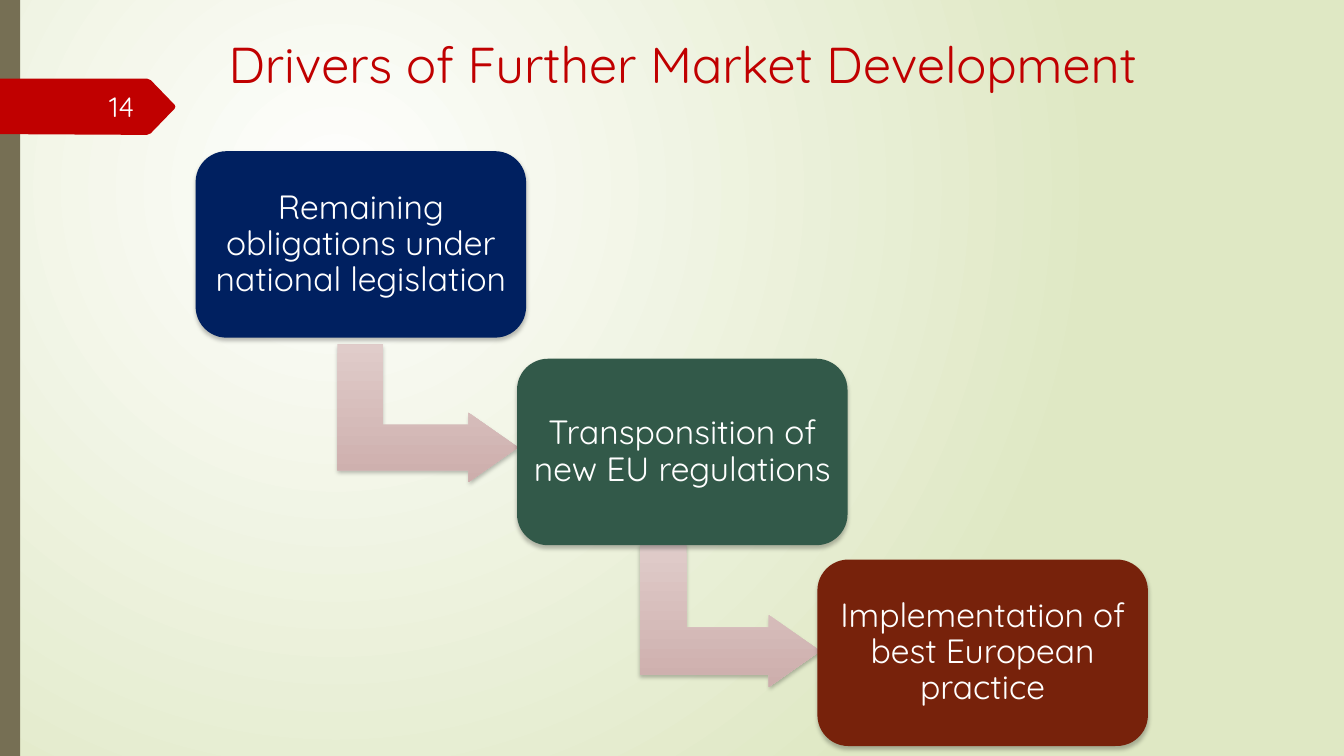
import dataclasses
import typing

import lxml.etree
import pptx
import pptx.dml.color
import pptx.enum.shapes
import pptx.enum.text
import pptx.oxml
import pptx.oxml.ns
import pptx.util

Cm = pptx.util.Cm
Pt = pptx.util.Pt
SHAPES = pptx.enum.shapes.MSO_SHAPE
ALIGN = pptx.enum.text.PP_ALIGN
ANCHOR = pptx.enum.text.MSO_ANCHOR
qn = pptx.oxml.ns.qn

FONT = "Quicksand"
COLORS = {
    "background_center": "FEFEFD",
    "background_edge": "DFE8C4",
    "side_bar": "766F54",
    "red": "C00000",
    "number": "FEFFFF",
    "white": "FFFFFF",
    "arrow_top": "E0CCCA",
    "arrow_bottom": "CDAEAC",
    "navy": "002060",
    "green": "325949",
    "brown": "77220B",
}
DRIVER_WIDTH, DRIVER_HEIGHT = Cm(8.33), Cm(4.7)
ARROW_HEIGHT = Cm(4.55)
ARROW_ADJUSTMENTS = (0.328, 0.25, 0.358)
TAG_OUTLINE = ((0, 1.98), (3.7, 1.98), (3.8, 2.02), (4.4, 2.64),
               (4.42, 2.69), (4.4, 2.74), (3.8, 3.36), (3.7, 3.4), (0, 3.38))


@dataclasses.dataclass
class Arrow:
    left: float
    top: float
    width: float


@dataclasses.dataclass
class Driver:
    text: str
    left: float
    top: float
    color: str
    arrow: typing.Optional[Arrow] = None


DRIVERS = (
    Driver("Remaining obligations under national legislation",
           4.93, 3.81, "navy", Arrow(9.04, 8.13, 3.48)),
    Driver("Transponsition of new EU regulations",
           13.03, 9.04, "green", Arrow(16.59, 13.23, 3.61)),
    Driver("Implementation of best European practice", 20.6, 14.1, "brown"),
)


def rgb(name: str) -> pptx.dml.color.RGBColor:
    return pptx.dml.color.RGBColor.from_string(COLORS[name])


def fill_plain(shape, color: str) -> None:
    shape.fill.solid()
    shape.fill.fore_color.rgb = rgb(color)
    shape.line.fill.background()
    shape.shadow.inherit = False


def fill_gradient(fill, start: str, end: str) -> None:
    fill.gradient()
    for stop, color, position in zip(fill.gradient_stops, (start, end), (0, 1)):
        stop.color.rgb = rgb(color)
        stop.position = position


def add_soft_shadow(shape) -> None:
    shape.shadow.inherit = False
    effects = shape._element.spPr.find(qn("a:effectLst"))
    outer = lxml.etree.SubElement(effects, qn("a:outerShdw"), blurRad=str(Pt(3)),
                                  dist=str(Pt(2)), dir="5400000", rotWithShape="0")
    black = lxml.etree.SubElement(outer, qn("a:srgbClr"), val="000000")
    lxml.etree.SubElement(black, qn("a:alpha"), val="25000")


def write(frame, text: str, size: float, color: str, align) -> None:
    frame.word_wrap = True
    paragraph = frame.paragraphs[0]
    paragraph.text = text
    paragraph.alignment = align
    paragraph.font.name = FONT
    paragraph.font.size = Pt(size)
    paragraph.font.color.rgb = rgb(color)


def paint_background(slide) -> None:
    fill_gradient(slide.background.fill, "background_center", "background_edge")
    gradient = slide.background._cSld.find(".//" + qn("a:gradFill"))
    gradient.remove(gradient.find(qn("a:lin")))
    circle = lxml.etree.Element(qn("a:path"), path="circle")
    lxml.etree.SubElement(circle, qn("a:fillToRect"),
                          l="50000", t="50000", r="100000", b="100000")
    gradient.find(qn("a:gsLst")).addnext(circle)


def add_arrow(slide, arrow: Arrow) -> None:
    bent = slide.shapes.add_shape(SHAPES.BENT_UP_ARROW, Cm(arrow.left), Cm(arrow.top),
                                  Cm(arrow.width), ARROW_HEIGHT)
    bent.rotation = 90
    for index, value in enumerate(ARROW_ADJUSTMENTS):
        bent.adjustments[index] = value
    fill_gradient(bent.fill, "arrow_top", "arrow_bottom")
    bent.fill.gradient_angle = 270
    bent._element.spPr.find(qn("a:gradFill")).set("rotWithShape", "0")
    bent.line.fill.background()
    add_soft_shadow(bent)


def add_driver(slide, driver: Driver) -> None:
    if driver.arrow:
        add_arrow(slide, driver.arrow)
    box = slide.shapes.add_shape(SHAPES.ROUNDED_RECTANGLE, Cm(driver.left),
                                 Cm(driver.top), DRIVER_WIDTH, DRIVER_HEIGHT)
    fill_plain(box, driver.color)
    add_soft_shadow(box)
    frame = box.text_frame
    frame.margin_left = frame.margin_right = Cm(0.1)
    frame.vertical_anchor = ANCHOR.MIDDLE
    write(frame, driver.text, 24, "white", ALIGN.CENTER)
    frame.paragraphs[0].line_spacing = 0.9


def main() -> None:
    deck = pptx.Presentation()
    deck.slide_width, deck.slide_height = Cm(33.87), Cm(19.05)
    slide = deck.slides.add_slide(deck.slide_layouts[6])
    paint_background(slide)

    side_bar = slide.shapes.add_shape(SHAPES.RECTANGLE, 0, 0, Cm(0.51), deck.slide_height)
    fill_plain(side_bar, "side_bar")

    outline = [(Cm(x), Cm(y)) for x, y in TAG_OUTLINE]
    builder = slide.shapes.build_freeform(*outline[0])
    builder.add_line_segments(outline[1:], close=True)
    fill_plain(builder.convert_to_shape(), "red")

    title = slide.shapes.add_textbox(Cm(5.51), Cm(0.71), Cm(28.36), Cm(1.8))
    write(title.text_frame, "Drivers of Further Market Development", 36, "red", ALIGN.LEFT)

    number = slide.shapes.add_textbox(Cm(1.47), Cm(2.18), Cm(2.16), Cm(1.02))
    number.text_frame.vertical_anchor = ANCHOR.MIDDLE
    write(number.text_frame, "14", 20, "number", ALIGN.RIGHT)

    for driver in DRIVERS:
        add_driver(slide, driver)
    deck.save("out.pptx")


if __name__ == "__main__":
    main()
